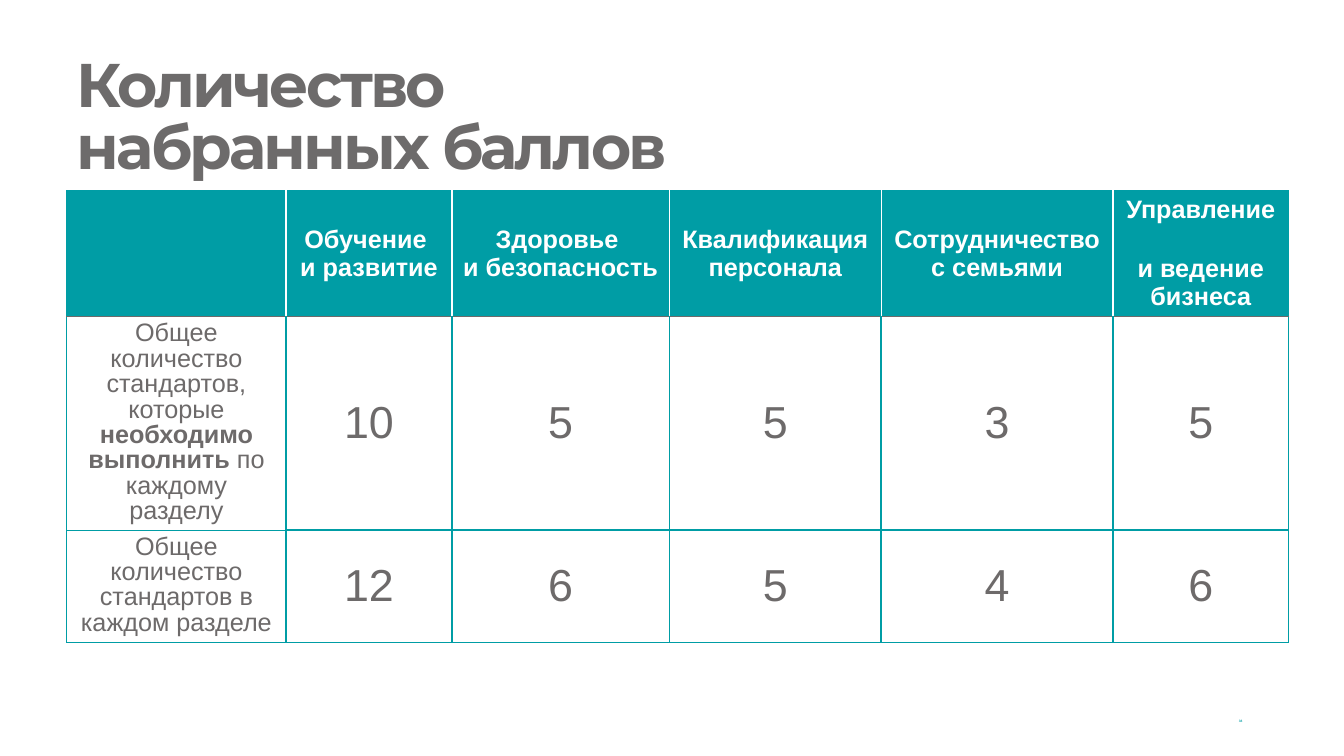
import pptx
import pptx.util
import pptx.dml.color
import pptx.enum.text
import pptx.oxml.ns
import lxml.etree

Inches, Pt = pptx.util.Inches, pptx.util.Pt
RGBColor = pptx.dml.color.RGBColor
ALIGN, ANCHOR = pptx.enum.text.PP_ALIGN, pptx.enum.text.MSO_ANCHOR
qn = pptx.oxml.ns.qn

TEAL = RGBColor(0x00, 0x9D, 0xA5)
WHITE = RGBColor(0xFF, 0xFF, 0xFF)
GRAY = RGBColor(0x6D, 0x6A, 0x6A)
TITLE_GRAY = RGBColor(0x6D, 0x6B, 0x6B)

TITLE = "Количество \nнабранных баллов"
HEADERS = ["", "Обучение \nи развитие", "Здоровье \nи безопасность",
           "Квалификация персонала", "Сотрудничество с семьями",
           "Управление \nи ведение бизнеса"]
ROWS = [
    ([("Общее количество стандартов, которые ", False),
      ("необходимо выполнить", True),
      (" по каждому разделу", False)], [10, 5, 5, 3, 5]),
    ([("Общее количество стандартов в каждом разделе", False)], [12, 6, 5, 4, 6]),
]
PAGE = "36"
COL_WIDTHS = [2.18, 1.64, 2.16, 2.1, 2.3, 1.74]
ROW_HEIGHTS = [1.25, 2.11, 1.12]


def add_text(p, text, size, color, bold=False, font="Arial", spacing=None):
    for i, line in enumerate(text.split("\n")):
        if i:
            p.add_line_break()
        r = p.add_run()
        r.text = line
        r.font.size, r.font.bold, r.font.name = Pt(size), bold, font
        r.font.color.rgb = color
        if spacing is not None:
            r._r.get_or_add_rPr().set("spc", str(spacing * 100))


def add_border(cell, side, color, width):
    ln = lxml.etree.SubElement(cell._tc.get_or_add_tcPr(), qn("a:ln" + side),
                               w=str(Pt(width)))
    fill = lxml.etree.SubElement(ln, qn("a:solidFill"))
    lxml.etree.SubElement(fill, qn("a:srgbClr"), val=str(color))


def vertical_edge(row, edge):
    if edge in (0, len(COL_WIDTHS)):
        return TEAL, 0.5
    if row == 0:
        return WHITE, 1.5 if edge < 4 else 1
    return TEAL, 1.5


def horizontal_edge(edge, col):
    if edge in (0, len(ROW_HEIGHTS)):
        return TEAL, 0.5
    if edge == 1:
        return GRAY, 1
    return TEAL, 0.5 if col == 0 else 1.5


def style_cell(cell, row, col):
    add_border(cell, "L", *vertical_edge(row, col))
    add_border(cell, "R", *vertical_edge(row, col + 1))
    add_border(cell, "T", *horizontal_edge(row, col))
    add_border(cell, "B", *horizontal_edge(row + 1, col))
    if row == 0:
        cell.fill.solid()
        cell.fill.fore_color.rgb = TEAL
    else:
        cell.fill.background()
    cell.vertical_anchor = ANCHOR.TOP if row and col == 0 else ANCHOR.MIDDLE


def add_scores(s):
    tbl = s.shapes.add_table(len(ROW_HEIGHTS), len(COL_WIDTHS), Inches(0.66), Inches(1.89),
                             Inches(sum(COL_WIDTHS)), Inches(sum(ROW_HEIGHTS))).table
    tbl.first_row = tbl.horz_banding = False
    for column, width in zip(tbl.columns, COL_WIDTHS):
        column.width = Inches(width)
    for row, height in zip(tbl.rows, ROW_HEIGHTS):
        row.height = Inches(height)

    grid = [[([(text, True)], 18, WHITE) for text in HEADERS]]
    for label, scores in ROWS:
        grid.append([(label, 18, GRAY)] + [([(str(n), False)], 32, GRAY) for n in scores])
    for i, line in enumerate(grid):
        for j, (runs, size, color) in enumerate(line):
            cell = tbl.cell(i, j)
            style_cell(cell, i, j)
            p = cell.text_frame.paragraphs[0]
            p.alignment = ALIGN.CENTER
            if i and j == 0:
                p.line_spacing = 0.9
            for text, bold in runs:
                if text:
                    add_text(p, text, size, color, bold)


def main():
    prs = pptx.Presentation()
    prs.slide_width, prs.slide_height = Inches(13.33), Inches(7.5)
    s = prs.slides.add_slide(prs.slide_layouts[5])

    title = s.shapes.title
    title.left, title.top = Inches(0.66), Inches(0.4)
    title.width, title.height = Inches(9.76), Inches(1.45)
    tf = title.text_frame
    tf.word_wrap = True
    tf.auto_size = pptx.enum.text.MSO_AUTO_SIZE.NONE
    tf.vertical_anchor = ANCHOR.BOTTOM
    p = tf.paragraphs[0]
    p.alignment, p.line_spacing = ALIGN.LEFT, Pt(44)
    add_text(p, TITLE, 44, TITLE_GRAY, True, "Montserrat", -2)

    add_scores(s)

    tf = s.shapes.add_textbox(Inches(9.42), Inches(6.95), Inches(3), Inches(0.4)).text_frame
    tf.word_wrap = True
    tf.vertical_anchor = ANCHOR.MIDDLE
    p = tf.paragraphs[0]
    p.alignment = ALIGN.RIGHT
    add_text(p, PAGE, 2.5, TEAL, True, "Calibri")

    prs.save("out.pptx")


if __name__ == "__main__":
    main()
